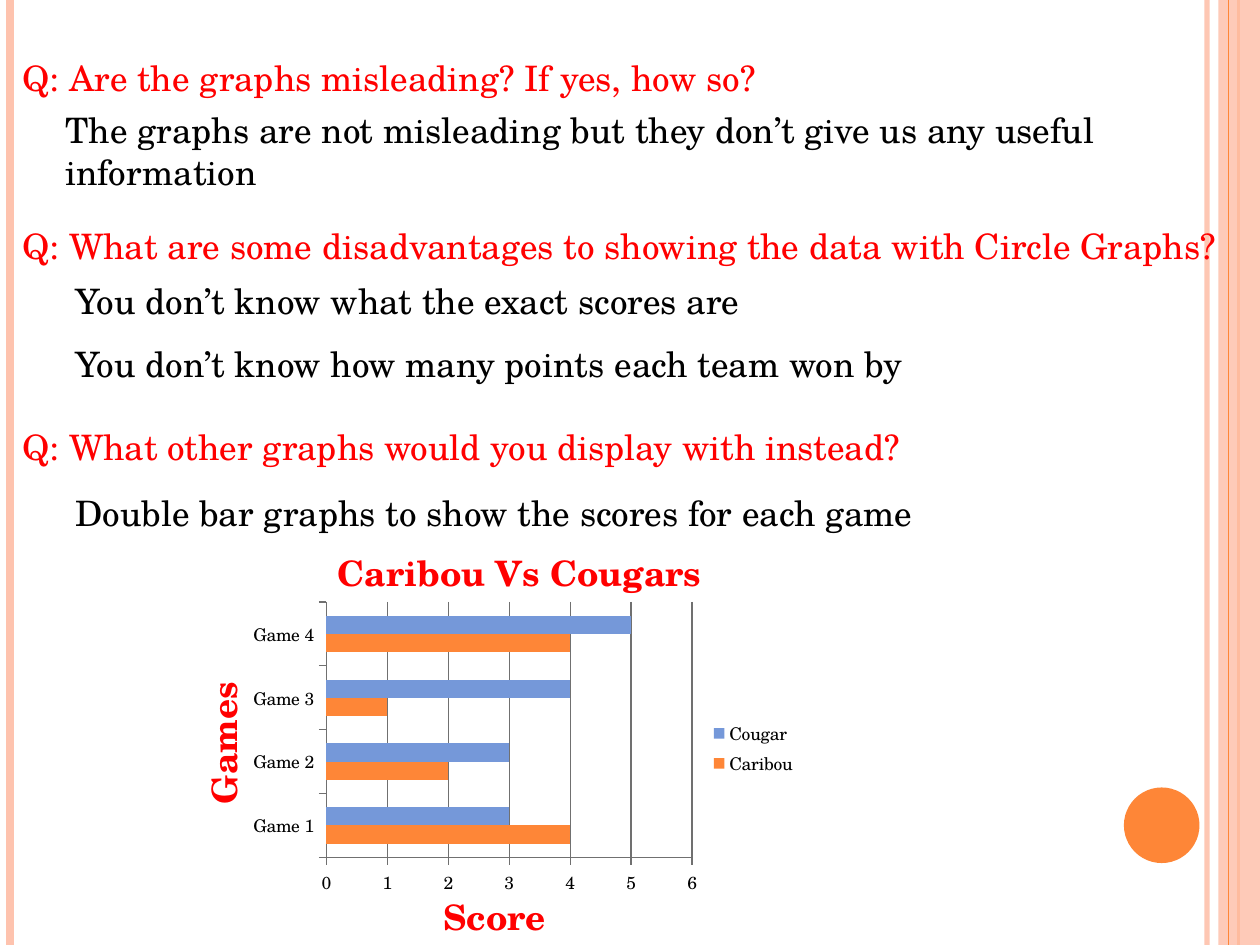
import lxml.etree
import pptx
import pptx.util
import pptx.chart.data
import pptx.dml.color
import pptx.enum.chart
import pptx.enum.shapes
import pptx.enum.text
import pptx.oxml.ns

Inches = pptx.util.Inches
Pt = pptx.util.Pt
SHAPE = pptx.enum.shapes.MSO_SHAPE
CHART = pptx.enum.chart

FONT = "TeX Gyre Schola"
RED, BLACK, GREY = "FF0000", "000000", "707070"
PEACH, ORANGE, BLUE = "FEC3AE", "FE8637", "7598D9"


def color(code):
    return pptx.dml.color.RGBColor.from_string(code)


def fade(root, alpha):
    """Give the solid colours under an element an opacity in percent."""
    for tone in list(root.iter(pptx.oxml.ns.qn("a:srgbClr"))):
        node = lxml.etree.SubElement(tone, pptx.oxml.ns.qn("a:alpha"))
        node.set("val", str(alpha * 1000))


class Page:
    def __init__(self, deck):
        self.slide = deck.slides.add_slide(deck.slide_layouts[6])
        self.shapes = self.slide.shapes

    def style(self, font, code, size, bold=False):
        form = {"name": FONT, "size": Pt(size), "bold": bold}
        for key, value in form.items():
            setattr(font, key, value)
        font.color.rgb = color(code)

    def rule(self, x, code, width, alpha=100):
        line = self.shapes.add_connector(
            pptx.enum.shapes.MSO_CONNECTOR.STRAIGHT,
            Inches(x), Inches(0), Inches(x), Inches(7.5))
        line.line.color.rgb = color(code)
        line.line.width = Pt(width)
        props = line._element.spPr
        if alpha < 100:
            fade(props, alpha)
        lxml.etree.SubElement(props, pptx.oxml.ns.qn("a:effectLst"))

    def shape(self, kind, box, code, alpha=100):
        item = self.shapes.add_shape(kind, *map(Inches, box))
        item.shadow.inherit = False
        item.fill.solid()
        item.fill.fore_color.rgb = color(code)
        item.line.fill.background()
        if alpha < 100:
            fade(item._element.spPr, alpha)

    def text(self, words, x, y, width, code=BLACK, high=0.44, bold=False, turn=0):
        box = self.shapes.add_textbox(*map(Inches, (x, y, width, high)))
        box.rotation = turn
        frame = box.text_frame
        form = {"word_wrap": False,
                "auto_size": pptx.enum.text.MSO_AUTO_SIZE.SHAPE_TO_FIT_TEXT}
        for key, value in form.items():
            setattr(frame, key, value)
        frame.text = words
        for run in frame.paragraphs[0].runs:
            self.style(run.font, code, 20, bold)

    def bars(self, box, cats, series):
        data = pptx.chart.data.CategoryChartData()
        data.categories = cats
        for name, values, _ in series:
            data.add_series(name, values)
        chart = self.shapes.add_chart(
            CHART.XL_CHART_TYPE.BAR_CLUSTERED, *map(Inches, box), data).chart
        self.style(chart.font, BLACK, 10)
        chart.has_title = False
        chart.has_legend = True
        chart.legend.position = CHART.XL_LEGEND_POSITION.RIGHT
        chart.legend.include_in_layout = False
        plot = chart.plots[0]
        form = {"gap_width": 150, "overlap": 0, "vary_by_categories": False}
        for key, value in form.items():
            setattr(plot, key, value)
        for row, (_, _, code) in zip(plot.series, series):
            row.format.fill.solid()
            row.format.fill.fore_color.rgb = color(code)
        scale = chart.value_axis
        form = {"minimum_scale": 0, "maximum_scale": 6, "major_unit": 1}
        for key, value in form.items():
            setattr(scale, key, value)
        scale.has_major_gridlines = True
        chart.category_axis.has_major_gridlines = False
        for part in (scale, chart.category_axis, scale.major_gridlines):
            part.format.line.color.rgb = color(GREY)
            part.format.line.width = Pt(0.75)
        for axis in (scale, chart.category_axis):
            axis.major_tick_mark = CHART.XL_TICK_MARK.OUTSIDE
            axis.minor_tick_mark = CHART.XL_TICK_MARK.NONE


def main():
    deck = pptx.Presentation()
    deck.slide_width, deck.slide_height = Inches(10), Inches(7.5)
    page = Page(deck)

    # Side bands and dot
    page.rule(9.58, PEACH, 3, 93)
    page.rule(0.08, PEACH, 4.5)
    page.rule(9.83, ORANGE, 1.5)
    page.shape(SHAPE.RECTANGLE, (9.67, 0, 0.33, 7.5), PEACH, 87)
    page.rule(9.75, ORANGE, 0.75)
    page.shape(SHAPE.OVAL, (8.92, 6.25, 0.6, 0.6), ORANGE)

    # Questions
    for words, y, width in (
            ("Q: Are the graphs misleading? If yes, how so?", 0.4, 6.07),
            ("Q: What are some disadvantages to showing the data with Circle Graphs?",
             1.73, 9.76),
            ("Q: What other graphs would you display with instead?", 3.33, 7.25)):
        page.text(words, 0.08, y, width, RED)

    # Answers
    page.text("The graphs are not misleading but they don’t give us any useful \v"
              "information", 0.42, 0.81, 8.54, high=0.77)
    for words, y, width in (
            ("You don’t know what the exact scores are", 2.17, 5.55),
            ("You don’t know how many points each team won by", 2.67, 6.88),
            ("Double bar graphs to show the scores for each game", 3.85, 6.9)):
        page.text(words, 0.5, y, width)

    # Score chart with its headings
    page.bars((1.92, 4.73, 4.5, 2.42), [f"Game {n}" for n in range(1, 5)],
              (("Caribou", (4, 2, 1, 4), ORANGE), ("Cougar", (3, 3, 4, 5), BLUE)))
    for words, x, y, width, turn in (
            ("Score", 3.42, 7.06, 1.02, 0),
            ("Games", 1.19, 5.67, 1.18, 270),
            ("Caribou Vs Cougars", 2.58, 4.33, 3.13, 0)):
        page.text(words, x, y, width, RED, bold=True, turn=turn)

    deck.save("out.pptx")


if __name__ == "__main__":
    main()
